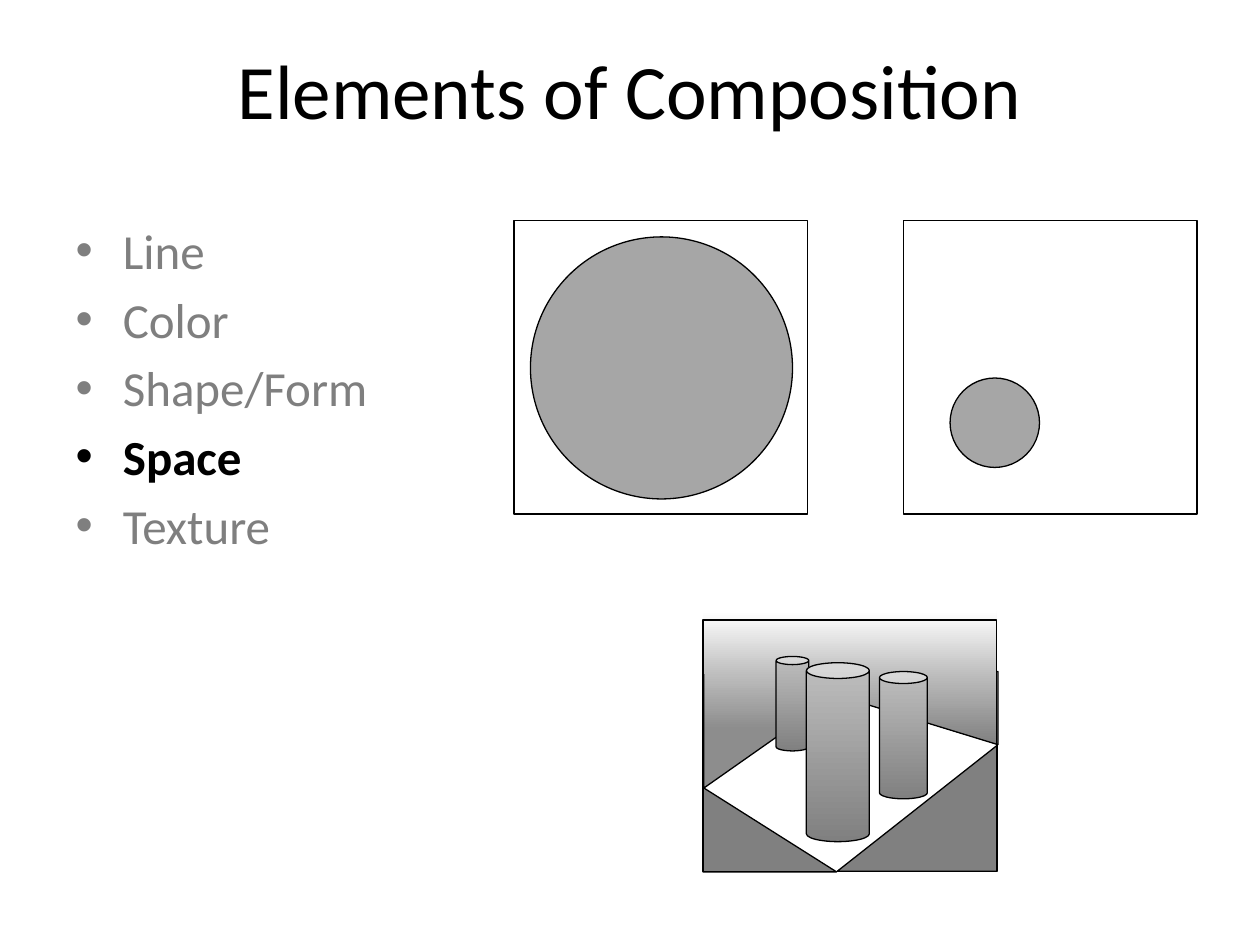
"""Build the Elements of Composition slide, with three drawings about space."""
from pptx import Presentation
from pptx.dml.color import RGBColor
from pptx.enum.shapes import MSO_SHAPE as SHAPE
from pptx.enum.text import MSO_ANCHOR, PP_ALIGN
from pptx.util import Inches, Pt

COLORS = {"black": "000000", "muted": "7F7F7F", "disc": "A6A6A6", "dark": "808080",
          "mid": "8D8D8D", "light": "BFBFBF", "white": "FFFFFF"}
FONT = "Calibri"
TITLE = "Elements of Composition"
ELEMENTS = ["Line", "Color", "Shape/Form", "Space", "Texture"]
CURRENT = "Space"

FRAME_TOP, FRAME_SIZE = 1.75, 2.33
FRAMES = [(4.08, (0.13, 0.13, 2.08)), (7.17, (0.37, 1.25, 0.71))]

SCENE = (5.58, 4.92, 2.33, 2)
WALLS = [
    (SHAPE.RIGHT_TRIANGLE, (6.03, 5.33, 1.89, 0.58), 180, ("light", "dark", 0, 90), True),
    (SHAPE.RIGHT_TRIANGLE, (5.78, 5.14, 0.92, 1.31), 90, ("mid", "light", 0.51, 180), True),
    (SHAPE.RECTANGLE, (5.58, 4.85, 2.33, 0.5), 0, ("light", "white", 0, 90), False),
]
FLOOR_CORNERS = [((5.58, 6.25, 1.06, 0.67), 0), ((6.78, 5.78, 1, 1.27), 270)]
CANS = [(6.98, 5.33, 0.38, 1.01), (6.16, 5.21, 0.26, 0.75), (6.4, 5.26, 0.5, 1.42)]
CAN_FILL = ("dark", "light", 0, 90)


def rgb(name):
    return RGBColor.from_string(COLORS[name])


def add_shape(shapes, kind, box, fill=None, rotation=0, outlined=True):
    sp = shapes.add_shape(kind, *map(Inches, box))
    sp.shadow.inherit = False
    sp.rotation = rotation
    if fill is None:
        sp.fill.background()
    elif isinstance(fill, str):
        sp.fill.solid()
        sp.fill.fore_color.rgb = rgb(fill)
    else:
        first, last, start, angle = fill
        sp.fill.gradient()
        sp.fill.gradient_angle = angle
        for stop, color, position in zip(sp.fill.gradient_stops, (first, last), (start, 1)):
            stop.color.rgb = rgb(color)
            stop.position = position
    if outlined:
        sp.line.color.rgb = rgb("black")
        sp.line.width = Pt(0.75)
    else:
        sp.line.fill.background()


def place(sp, box):
    sp.left, sp.top, sp.width, sp.height = map(Inches, box)


def add_run(p, text, size, color, bold=False):
    r = p.add_run()
    r.text = text
    r.font.name, r.font.size, r.font.bold = FONT, Pt(size), bold
    r.font.color.rgb = rgb(color)


def add_text(s):
    title, body = s.placeholders
    place(title, (0.5, 0.08, 9, 1.25))
    title.text_frame.vertical_anchor = MSO_ANCHOR.MIDDLE
    p = title.text_frame.paragraphs[0]
    p.alignment = PP_ALIGN.CENTER
    add_run(p, TITLE, 44, "black")

    place(body, (0.5, 1.7, 2.92, 4.21))
    tf = body.text_frame
    for i, element in enumerate(ELEMENTS):
        p = tf.add_paragraph() if i else tf.paragraphs[0]
        current = element == CURRENT
        add_run(p, element, 28, "black" if current else "muted", current)


def add_frames(s):
    for left, (dx, dy, size) in FRAMES:
        shapes = s.shapes.add_group_shape().shapes
        add_shape(shapes, SHAPE.RECTANGLE, (left, FRAME_TOP, FRAME_SIZE, FRAME_SIZE))
        add_shape(shapes, SHAPE.OVAL, (left + dx, FRAME_TOP + dy, size, size), "disc")


def add_scene(s):
    for kind, box, rotation, fill, outlined in WALLS:
        add_shape(s.shapes, kind, box, fill, rotation, outlined)
    for box, rotation in FLOOR_CORNERS:
        add_shape(s.shapes, SHAPE.RIGHT_TRIANGLE, box, "dark", rotation)
    for box in CANS:
        add_shape(s.shapes, SHAPE.CAN, box, CAN_FILL)
    add_shape(s.shapes, SHAPE.RECTANGLE, SCENE)


def main():
    prs = Presentation()
    prs.slide_width, prs.slide_height = Inches(10), Inches(7.5)
    s = prs.slides.add_slide(prs.slide_layouts[1])
    add_text(s)
    add_frames(s)
    add_scene(s)
    prs.save("out.pptx")


if __name__ == "__main__":
    main()
